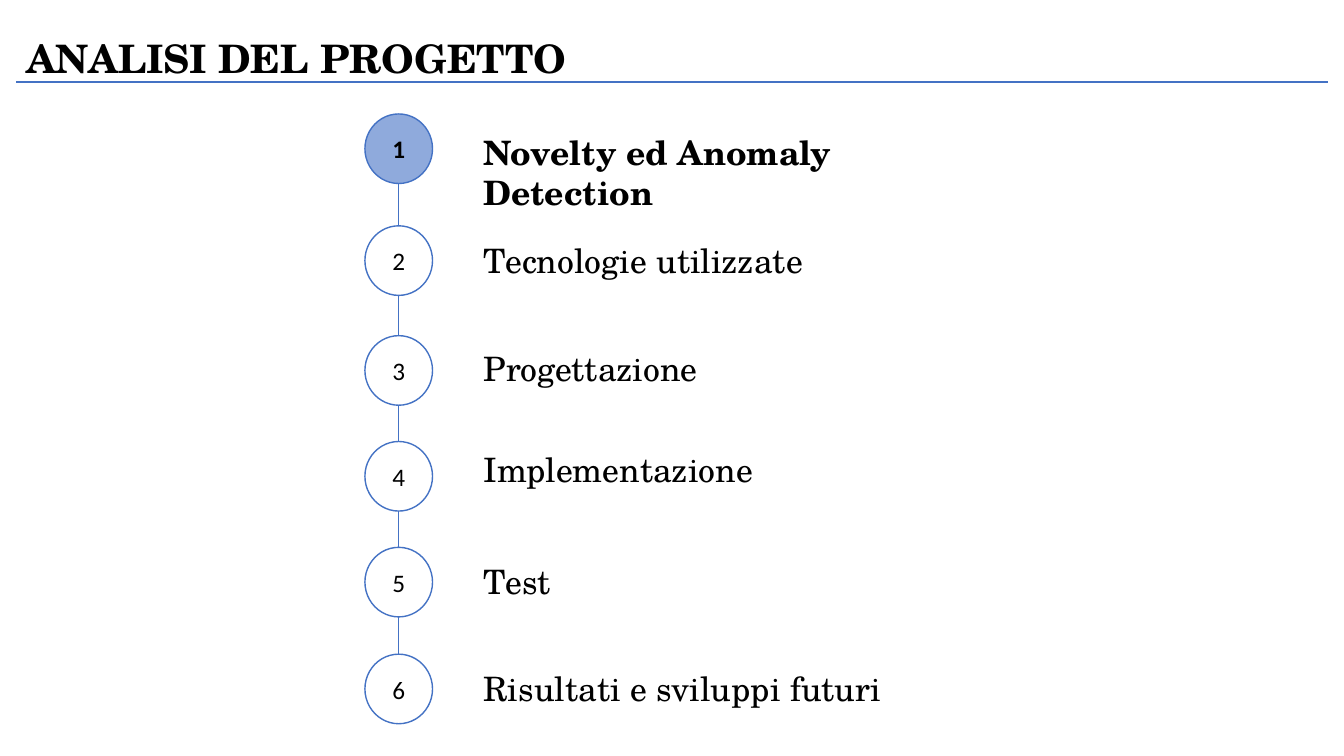
"""Build the agenda slide of the project analysis."""
from lxml import etree
from pptx import Presentation
from pptx.dml.color import RGBColor
from pptx.enum import shapes, text
from pptx.oxml import ns
from pptx.util import Inches, Pt

COLORS = {"ink": "000000", "line": "4472C4", "current": "8FAADC", "plain": "FFFFFF"}
SERIF = "TeX Gyre Schola"
SANS = "Calibri"
WIDTH, HEIGHT = Inches(13.33), Inches(7.5)
CIRCLE_LEFT, CIRCLE_WIDTH, CIRCLE_HEIGHT = 27.15, 5.03, 9.2
LABEL_LEFT, LABEL_WIDTH, LABEL_HEIGHT = 35.25, 35.1, 6.67
STAGES = [
    ("Novelty ed Anomaly Detection", 15.07, 16.8),
    ("Tecnologie utilizzate", 29.87, 31.07),
    ("Progettazione", 44.4, 45.33),
    ("Implementazione", 58.4, 58.67),
    ("Test", 72.4, 73.6),
    ("Risultati e sviluppi futuri", 86.53, 87.73),
]


def color(name):
    """Return the named colour."""
    return RGBColor.from_string(COLORS[name])


def area(left, top, width, height):
    """Turn percentages of the slide into lengths."""
    return [round(share * side / 100)
            for share, side in zip((left, top, width, height), (WIDTH, HEIGHT) * 2)]


def write(shape, content, size, font, bold, align, anchor):
    """Put one formatted paragraph into a shape."""
    frame = shape.text_frame
    frame_format = {"word_wrap": True, "auto_size": text.MSO_AUTO_SIZE.NONE,
                    "vertical_anchor": anchor}
    for name, value in frame_format.items():
        setattr(frame, name, value)
    paragraph = frame.paragraphs[0]
    paragraph.alignment = align
    run = paragraph.add_run()
    run.text = content
    for name, value in {"size": Pt(size), "name": font, "bold": bold}.items():
        setattr(run.font, name, value)
    run.font.color.rgb = color("ink")


def add_title(slide, content):
    """Place and format the title."""
    title = slide.shapes.title
    names = ("left", "top", "width", "height")
    for name, value in zip(names, area(1.2, 3.87, 48.75, 13.87)):
        setattr(title, name, value)
    write(title, content, 28, SERIF, True, text.PP_ALIGN.LEFT, text.MSO_ANCHOR.TOP)


def add_line(slide, start_x, start_y, end_x, end_y, weight):
    """Draw a straight line between two points."""
    line = slide.shapes.add_connector(
        shapes.MSO_CONNECTOR.STRAIGHT, *area(start_x, start_y, end_x, end_y))
    line.line.color.rgb = color("line")
    line.line.width = Pt(weight)
    etree.SubElement(line._element.spPr, ns.qn("a:effectLst"))


def add_circle(slide, number, top, current):
    """Draw a numbered stage circle."""
    circle = slide.shapes.add_shape(
        shapes.MSO_SHAPE.FLOWCHART_CONNECTOR,
        *area(CIRCLE_LEFT, top, CIRCLE_WIDTH, CIRCLE_HEIGHT))
    circle.shadow.inherit = False
    circle.fill.solid()
    circle.fill.fore_color.rgb = color("current" if current else "plain")
    circle.line.color.rgb = color("line")
    circle.line.width = Pt(1)
    write(circle, str(number), 18, SANS, current,
          text.PP_ALIGN.CENTER, text.MSO_ANCHOR.MIDDLE)


def add_label(slide, content, top, current):
    """Write the name of a stage."""
    label = slide.shapes.add_textbox(*area(LABEL_LEFT, top, LABEL_WIDTH, LABEL_HEIGHT))
    write(label, content, 24, SERIF, current, text.PP_ALIGN.LEFT, text.MSO_ANCHOR.TOP)


def main():
    """Build and save the slide."""
    presentation = Presentation()
    presentation.slide_width, presentation.slide_height = WIDTH, HEIGHT
    slide = presentation.slides.add_slide(presentation.slide_layouts[5])
    add_title(slide, "ANALISI DEL PROGETTO")
    add_line(slide, 1.2, 10.8, 98.78, 10.8, 1.5)
    for number, (name, circle_top, label_top) in enumerate(STAGES, 1):
        current = number == 1
        add_circle(slide, number, circle_top, current)
        add_label(slide, name, label_top, current)
    center = CIRCLE_LEFT + CIRCLE_WIDTH / 2
    for (_, upper, _), (_, lower, _) in zip(STAGES, STAGES[1:]):
        add_line(slide, center, upper + CIRCLE_HEIGHT, center, lower, 0.5)
    presentation.save("out.pptx")


if __name__ == "__main__":
    main()
